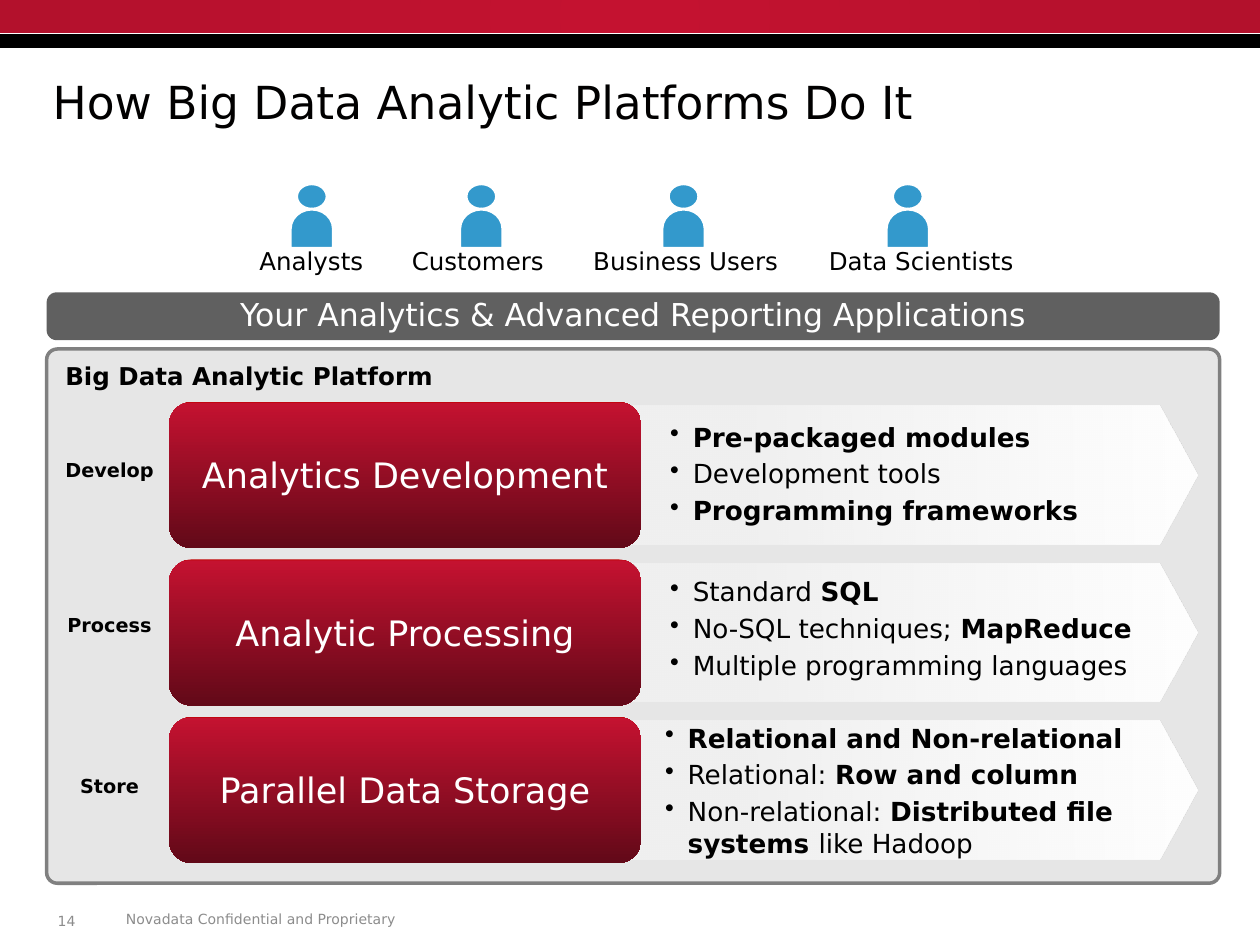
from dataclasses import dataclass

from lxml.etree import SubElement
from pptx import Presentation
from pptx.dml.color import RGBColor
from pptx.enum.shapes import MSO_SHAPE
from pptx.enum.text import MSO_ANCHOR, PP_ALIGN
from pptx.oxml import parse_xml
from pptx.oxml.ns import nsdecls, qn
from pptx.util import Inches, Pt

WIDTH, HEIGHT = Inches(10), Inches(7.5)
COLUMNS, ROWS = 100, 75
FONT = "DejaVu Sans"
BLACK, WHITE, BLUE, GRAY = "000000", "FFFFFF", "3399CC", "8C8C8C"
DEEP_RED = [(0, "C00000", 100), (1, "C41230", 100), (100, "620918", 100)]
PALE_FADE = [(23, WHITE, 40), (100, WHITE, 100)]
HEADER_GLOW = [(0, "C41230", 100), (100, "B3112C", 100)]

USERS = [
    ("Analysts", 19.6, 10.3, 24.75),
    ("Customers", 31.7, 12.6, 38.2),
    ("Business Users", 46.1, 16.8, 54.25),
    ("Data Scientists", 64.8, 16.8, 72.05),
]
LAYERS = [
    ("Develop", 3.9, "Analytics Development", 38.8, 1, [
        [("Pre-packaged modules", True)],
        [("Development tools", False)],
        [("Programming frameworks", True)],
    ]),
    ("Process", 3.7, "Analytic Processing", 38.8, 0.8, [
        [("Standard ", False), ("SQL", True)],
        [("No-SQL techniques; ", False), ("MapReduce", True)],
        [("Multiple programming languages", False)],
    ]),
    ("Store", 4, "Parallel Data Storage", 38.4, -0.1, [
        [("Relational and Non-relational", True)],
        [("Relational: ", False), ("Row and column", True)],
        [("Non-relational: ", False), ("Distributed file systems ", True),
         ("like Hadoop", False)],
    ]),
]


@dataclass
class Box:
    """A rectangle in grid columns and rows."""
    left: float
    top: float
    width: float
    height: float

    def inner(self, left, top, width, height):
        """Return a box measured from this box's corner."""
        return Box(self.left + left, self.top + top, width, height)

    def lengths(self):
        """Return the rectangle in slide lengths."""
        column, row = WIDTH / COLUMNS, HEIGHT / ROWS
        return (round(self.left * column), round(self.top * row),
                round(self.width * column), round(self.height * row))


def color(value):
    """Turn a hex string into a colour."""
    return RGBColor.from_string(value)


def add_shape(page, box, kind, fill=None, line=None, points=1, corner=None):
    """Place a preset shape without shadow."""
    shape = page.shapes.add_shape(kind, *box.lengths())
    shape.shadow.inherit = False
    if corner is not None:
        shape.adjustments[0] = corner
    if fill:
        shape.fill.solid()
        shape.fill.fore_color.rgb = color(fill)
    if line:
        shape.line.color.rgb = color(line)
        shape.line.width = Pt(points)
    else:
        shape.line.fill.background()
    return shape


def paint_gradient(shape, stops, angle=None):
    """Fill a shape with a linear gradient, or a round one without angle."""
    marks = "".join(
        f'<a:gs pos="{place * 1000}"><a:srgbClr val="{value}">'
        f'<a:alpha val="{alpha * 1000}"/></a:srgbClr></a:gs>'
        for place, value, alpha in stops)
    if angle is None:
        course = ('<a:path path="circle"><a:fillToRect l="50000" t="50000" '
                  'r="50000" b="50000"/></a:path>')
    else:
        course = f'<a:lin ang="{angle * 60000}" scaled="0"/>'
    gradient = parse_xml(f'<a:gradFill {nsdecls("a")} rotWithShape="1">'
                         f'<a:gsLst>{marks}</a:gsLst>{course}</a:gradFill>')
    shape.fill.background()
    properties = shape.element.spPr
    properties.replace(properties.find(qn("a:noFill")), gradient)


def add_span(para, text, size, value, bold=False):
    """Append one run to a paragraph."""
    span = para.add_run()
    span.text = text
    span.font.name = FONT
    span.font.size = Pt(size)
    span.font.bold = bold
    span.font.color.rgb = color(value)


def write_line(shape, text, size, value, bold=False, centered=False,
               anchor=MSO_ANCHOR.MIDDLE, wrap=True):
    """Write a single line into a shape."""
    frame = shape.text_frame
    frame.word_wrap = wrap
    frame.vertical_anchor = anchor
    para = frame.paragraphs[0]
    para.alignment = PP_ALIGN.CENTER if centered else PP_ALIGN.LEFT
    add_span(para, text, size, value, bold)
    return para


def add_text(page, box, text, size, value, **style):
    """Place a text box holding one line."""
    return write_line(page.shapes.add_textbox(*box.lengths()),
                      text, size, value, **style)


def add_bullets(page, box, items):
    """Place a bulleted list of mixed weight."""
    frame = page.shapes.add_textbox(*box.lengths()).text_frame
    frame.word_wrap = True
    for index, item in enumerate(items):
        para = frame.add_paragraph() if index else frame.paragraphs[0]
        para.space_after = Pt(3)
        properties = para._p.get_or_add_pPr()
        properties.set("marL", str(Inches(0.18)))
        properties.set("indent", str(-Inches(0.18)))
        SubElement(properties, qn("a:buChar")).set("char", "•")
        for text, bold in item:
            add_span(para, text, 15, BLACK, bold)


def add_header(page, box):
    """Draw the red and black bands at the top."""
    add_shape(page, box.inner(0, 2.7, box.width, 1.1), MSO_SHAPE.RECTANGLE, BLACK)
    band = add_shape(page, box.inner(0, 0, box.width, 2.6), MSO_SHAPE.RECTANGLE)
    paint_gradient(band, HEADER_GLOW)


def add_footer(page, box):
    """Write the page number and the confidentiality line."""
    add_text(page, box.inner(0, 0.1, 6.5, 2.4), "14", 8, GRAY)
    add_text(page, box.inner(5.4, 0, 44.2, 2.3),
             "Novadata Confidential and Proprietary", 8, GRAY)


def add_users(page, box):
    """Draw the row of user figures with their labels."""
    for label, left, width, center in USERS:
        add_text(page, box.inner(left, 4.4, width, 3.4), label, 14, BLACK,
                 anchor=MSO_ANCHOR.TOP, wrap=False)
        add_shape(page, box.inner(center - 1.2, 0, 2.4, 2),
                  MSO_SHAPE.OVAL, BLUE, WHITE, 1.5)
        body = add_shape(page, box.inner(center - 1.55, 1.85, 3.1, 3.4),
                         MSO_SHAPE.FLOWCHART_DELAY, BLUE, WHITE, 1.5)
        body.rotation = 270


def add_layer(page, box, layer):
    """Draw one platform layer: label, arrow, red block and bullets."""
    label, label_top, name, list_left, list_top, items = layer
    add_text(page, box.inner(-10.9, label_top, 12.4, 2.9), label, 11, BLACK,
             bold=True, centered=True)
    arrow = add_shape(page, box.inner(35.4, 0.3, 46.2, 11),
                      MSO_SHAPE.PENTAGON, corner=0.275)
    paint_gradient(arrow, PALE_FADE, 359)
    block = add_shape(page, box.inner(0, 0, 37.5, box.height),
                      MSO_SHAPE.ROUNDED_RECTANGLE, corner=0.16)
    paint_gradient(block, DEEP_RED, 90)
    write_line(block, name, 20, WHITE, centered=True)
    add_bullets(page, box.inner(list_left, list_top, 42.2, 9.8), items)


def add_platform(page, box):
    """Draw the platform panel and its layers."""
    add_shape(page, box, MSO_SHAPE.ROUNDED_RECTANGLE, "E6E6E6", "808080", 2, 0.02)
    add_text(page, box.inner(0.5, 0.4, 31.4, 3.4), "Big Data Analytic Platform",
             14, BLACK, bold=True, wrap=False)
    for index, layer in enumerate(LAYERS):
        add_layer(page, box.inner(9.7, 4.2 + 12.5 * index, 81.6, 11.6), layer)


def add_banner(page, box):
    """Draw the applications banner."""
    banner = add_shape(page, box, MSO_SHAPE.ROUNDED_RECTANGLE, "606060", corner=0.21)
    para = write_line(banner, "Your Analytics & Advanced Reporting Applications",
                      18, WHITE, centered=True)
    para.line_spacing = 0.9


def main():
    """Build and save the deck."""
    deck = Presentation()
    deck.slide_width, deck.slide_height = WIDTH, HEIGHT
    page = deck.slides.add_slide(deck.slide_layouts[6])
    add_header(page, Box(0, 0, COLUMNS, 3.8))
    add_footer(page, Box(3.6, 71.8, 49.6, 2.5))
    add_text(page, Box(3.2, 5.4, 92.7, 6.3), "How Big Data Analytic Platforms Do It",
             26, "010000", anchor=MSO_ANCHOR.TOP)
    add_platform(page, Box(3.7, 27.7, 93.1, 42.4))
    add_banner(page, Box(3.7, 23.2, 93.1, 3.8))
    add_users(page, Box(0, 14.6, COLUMNS, 7.8))
    deck.save("out.pptx")


if __name__ == "__main__":
    main()
